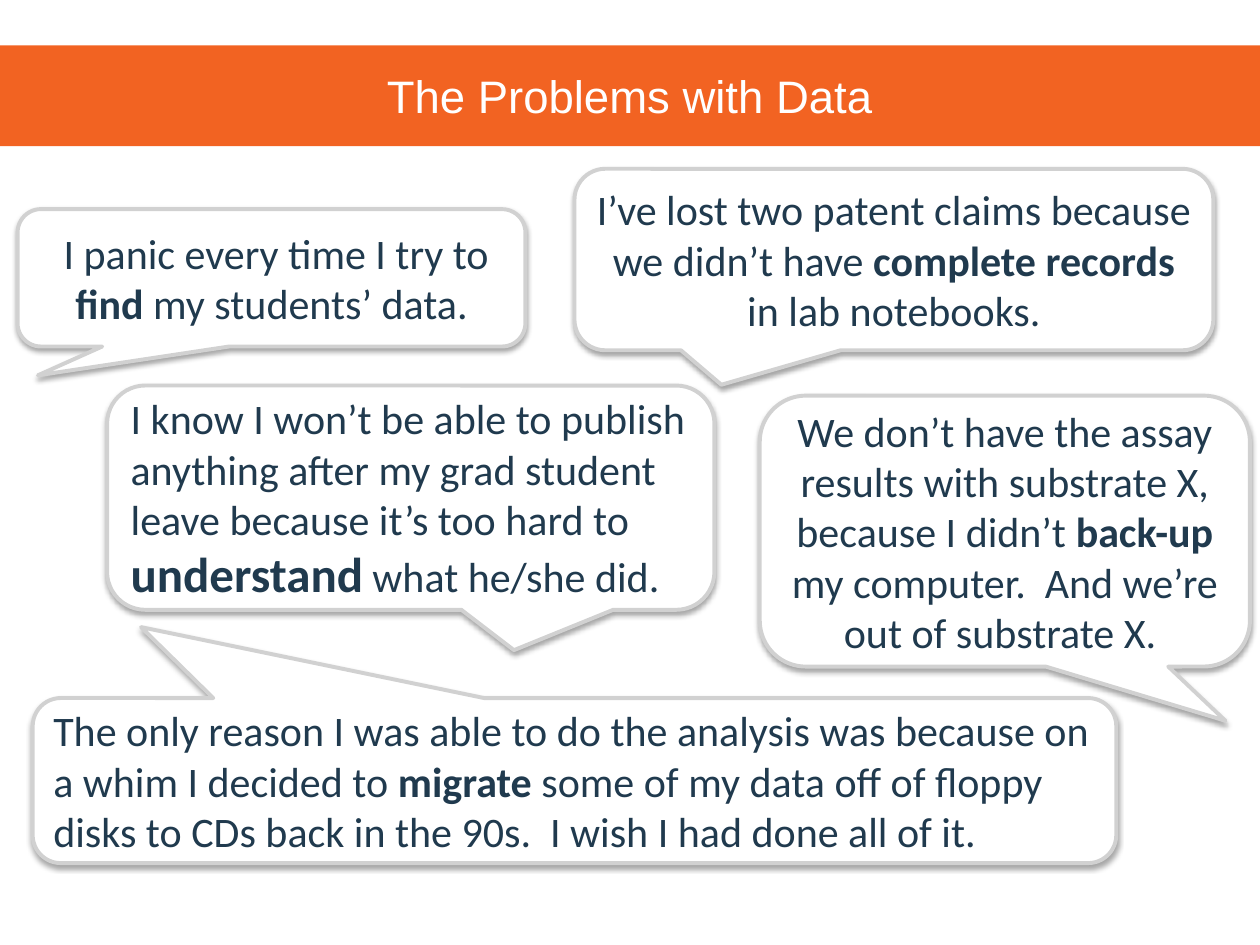
import dataclasses
import typing

import lxml.etree
import pptx
import pptx.dml.color
import pptx.enum.shapes
import pptx.enum.text
import pptx.oxml
import pptx.oxml.ns
import pptx.util

COLS, ROWS = 100, 75
HUES = {
    "bar": "F26322",
    "paper": "FFFFFF",
    "edge": "D1D1D1",
    "ink": "203A4E",
    "shade": "000000",
}
ALIGN = pptx.enum.text.PP_ALIGN
MIDDLE = pptx.enum.text.MSO_ANCHOR.MIDDLE


@dataclasses.dataclass
class Box:
    col: float
    row: float
    wide: float
    high: float


@dataclasses.dataclass
class Quote:
    box: Box
    tip: tuple[float, float]
    before: str
    key: str
    after: str
    align: typing.Any = ALIGN.CENTER
    size: int = 24


QUOTES = [
    Quote(Box(45.6, 13.4, 50.7, 14.4), (-0.27, 0.69),
          "I’ve lost two patent claims because we didn’t have ",
          "complete records ", "in lab notebooks."),
    Quote(Box(1.4, 16.6, 40.3, 10.9), (-0.46, 0.71),
          " I panic every time I try to ", "find", " my students’ data."),
    Quote(Box(8.5, 30.6, 48.2, 17.8), (0.17, 0.68),
          "I know I won’t be able to publish anything after my grad student "
          "leave because it’s too hard to ",
          "understand", " what he/she did.", ALIGN.LEFT, 28),
    Quote(Box(60.3, 31.4, 38.9, 21.5), (0.45, 0.7),
          "We don’t have the assay results with substrate X, because I didn’t ",
          "back-up ", "my computer.  And we’re out of substrate X. "),
    Quote(Box(2.6, 55.4, 86, 13.1), (-0.4, -0.93),
          "The only reason I was able to do the analysis was because on a whim "
          "I decided to ", "migrate",
          " some of my data off of floppy disks to CDs back in the 90s.  "
          "I wish I had done all of it.", ALIGN.LEFT),
]

deck = pptx.Presentation()
deck.slide_width = pptx.util.Inches(10)
deck.slide_height = pptx.util.Inches(7.5)


def hue(name: str) -> pptx.dml.color.RGBColor:
    return pptx.dml.color.RGBColor.from_string(HUES[name])


def place(box: Box) -> tuple[int, int, int, int]:
    x, y = deck.slide_width / COLS, deck.slide_height / ROWS
    return (round(box.col * x), round(box.row * y),
            round(box.wide * x), round(box.high * y))


def paint(shape: typing.Any, name: str) -> None:
    shape.fill.solid()
    shape.fill.fore_color.rgb = hue(name)


def style(font: typing.Any, face: str, size: int, name: str) -> None:
    font.name = face
    font.size = pptx.util.Pt(size)
    font.color.rgb = hue(name)


def shade(shape: typing.Any) -> None:
    shape.shadow.inherit = False
    list_ = shape._element.spPr.find(pptx.oxml.ns.qn("a:effectLst"))
    blur, gap = pptx.util.Pt(3.1), pptx.util.Pt(1.8)
    list_.append(pptx.oxml.parse_xml(
        f'<a:outerShdw {pptx.oxml.ns.nsdecls("a")} blurRad="{blur}" '
        f'dist="{gap}" dir="5400000" rotWithShape="0">'
        f'<a:srgbClr val="{HUES["shade"]}"><a:alpha val="35000"/></a:srgbClr>'
        '</a:outerShdw>'))


def head(slide: typing.Any, text: str) -> None:
    bar = slide.shapes.title
    bar.left, bar.top, bar.width, bar.height = place(Box(0, 3.6, COLS, 8))
    paint(bar, "bar")
    frame = bar.text_frame
    frame.text = text
    frame.auto_size = pptx.enum.text.MSO_AUTO_SIZE.NONE
    frame.vertical_anchor = MIDDLE
    line = frame.paragraphs[0]
    line.alignment = ALIGN.CENTER
    style(line.font, "Arial", 26, "paper")


def speak(slide: typing.Any, quote: Quote) -> None:
    kind = pptx.enum.shapes.MSO_SHAPE.ROUNDED_RECTANGULAR_CALLOUT
    shape = slide.shapes.add_shape(kind, *place(quote.box))
    for i, value in enumerate((*quote.tip, 0.17)):
        shape.adjustments[i] = value
    paint(shape, "paper")
    shape.line.color.rgb = hue("edge")
    shape.line.width = pptx.util.Pt(2.25)
    shade(shape)
    frame = shape.text_frame
    frame.word_wrap = True
    frame.vertical_anchor = MIDDLE
    line = frame.paragraphs[0]
    line.alignment = quote.align
    line.space_after = pptx.util.Pt(8)
    style(line.font, "Calibri", 24, "ink")
    for text in (quote.before, quote.key, quote.after):
        run = line.add_run()
        run.text = text
        if text == quote.key:
            run.font.bold = True
            run.font.size = pptx.util.Pt(quote.size)


def main() -> None:
    slide = deck.slides.add_slide(deck.slide_layouts[5])
    head(slide, "The Problems with Data")
    for quote in QUOTES:
        speak(slide, quote)
    deck.save("out.pptx")


if __name__ == "__main__":
    main()
